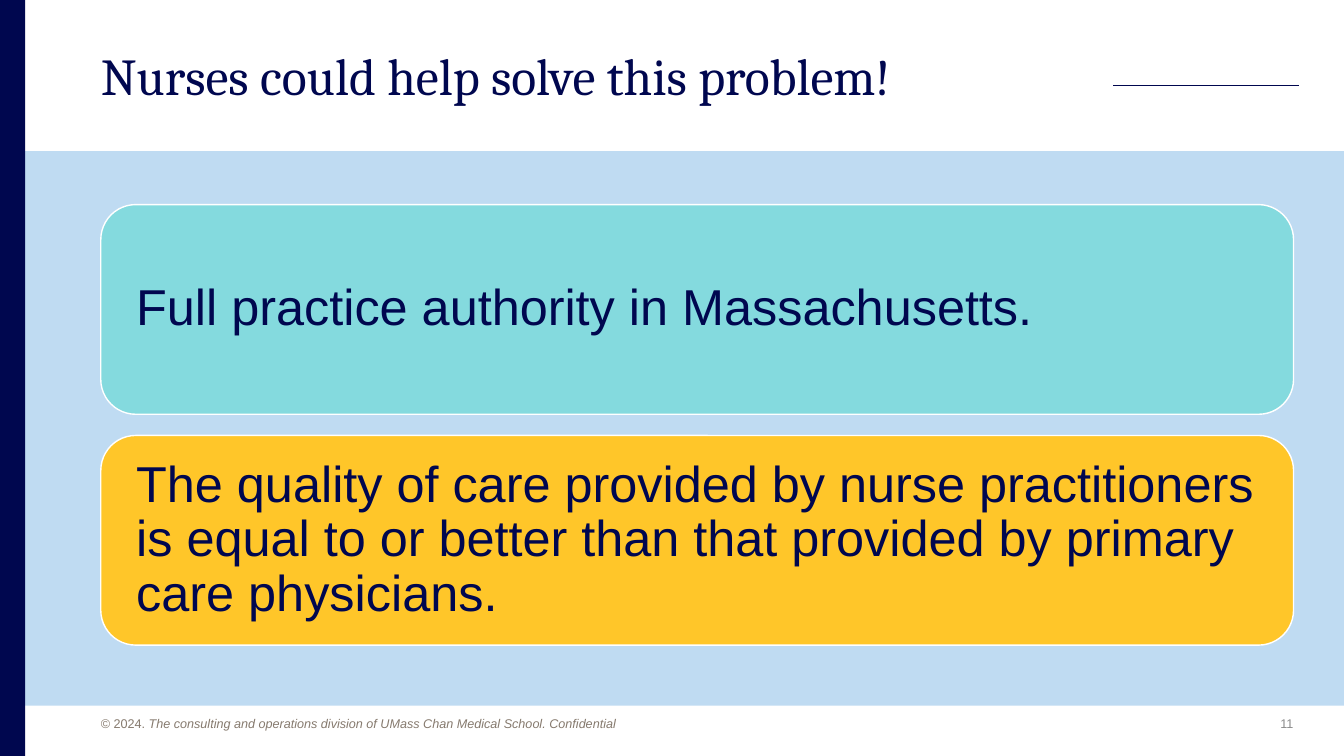
import pptx
import pptx.dml.color
import pptx.enum.shapes
import pptx.enum.text
import pptx.oxml
import pptx.oxml.ns
import pptx.util
from pptx.util import Inches

Shape = pptx.enum.shapes.MSO_SHAPE
Anchor = pptx.enum.text.MSO_ANCHOR
Align = pptx.enum.text.PP_ALIGN

NAVY, BLUE, WHITE = "00074F", "0071CE", "FFFFFF"
TEAL, GOLD, TAUPE, GREY = "84DADE", "FFC629", "867A6E", "8C8C8C"


def tint(color, code):
    color.rgb = pptx.dml.color.RGBColor.from_string(code)


class Deck:
    small = {"name": "Arial", "size": pptx.util.Pt(9)}
    large = {"name": "Arial", "size": pptx.util.Pt(36)}
    head = {"name": "Cambria", "size": pptx.util.Pt(37), "bold": False}

    def __init__(self):
        self.prs = pptx.Presentation()
        self.prs.slide_width = Inches(13.33)
        self.prs.slide_height = Inches(7.5)
        self.slide = self.prs.slides.add_slide(self.prs.slide_layouts[5])
        self.shapes = self.slide.shapes

    def letter(self, shape, runs, style, code, anchor, inset=0, **form):
        """Fill a shape with one paragraph of (text, italic) runs."""
        frame = shape.text_frame
        frame.word_wrap = True
        frame.auto_size = pptx.enum.text.MSO_AUTO_SIZE.NONE
        frame.vertical_anchor = anchor
        for side in ("left", "top", "right", "bottom"):
            setattr(frame, "margin_" + side, Inches(inset))
        para = frame.paragraphs[0]
        for key, value in ({"alignment": Align.LEFT} | form).items():
            setattr(para, key, value)
        for text, italic in runs:
            run = para.add_run()
            run.text = text
            for key, value in (style | {"italic": italic}).items():
                setattr(run.font, key, value)
            tint(run.font.color, code)

    def title(self, text, box):
        shape = self.shapes.title
        names = ("left", "top", "width", "height")
        for name, value in zip(names, box):
            setattr(shape, name, Inches(value))
        self.letter(shape, [(text, False)], self.head, NAVY, Anchor.TOP,
                    line_spacing=0.9)

    def block(self, kind, box, code, alpha=None):
        shape = self.shapes.add_shape(kind, *map(Inches, box))
        shape.shadow.inherit = False
        shape.fill.solid()
        tint(shape.fill.fore_color, code)
        shape.line.fill.background()
        if alpha:
            tone = shape._element.spPr.find(
                ".//" + pptx.oxml.ns.qn("a:srgbClr"))
            tone.append(pptx.oxml.parse_xml(
                f'<a:alpha {pptx.oxml.ns.nsdecls("a")} val="{alpha * 1000}"/>'))
        return shape

    def card(self, text, box, code):
        shape = self.block(Shape.ROUNDED_RECTANGLE, box, code)
        tint(shape.line.color, WHITE)
        shape.line.width = pptx.util.Pt(1)
        self.letter(shape, [(text, False)], self.large, NAVY, Anchor.MIDDLE,
                    0.25, line_spacing=0.9)

    def label(self, runs, box, code, **form):
        shape = self.shapes.add_textbox(*map(Inches, box))
        self.letter(shape, runs, self.small, code, Anchor.BOTTOM, **form)

    def rule(self, start, end):
        line = self.shapes.add_connector(
            pptx.enum.shapes.MSO_CONNECTOR.STRAIGHT,
            *map(Inches, start + end))
        tint(line.line.color, NAVY)
        line.line.width = pptx.util.Pt(0.5)
        line._element.spPr.append(pptx.oxml.parse_xml(
            f'<a:effectLst {pptx.oxml.ns.nsdecls("a")}/>'))


def main():
    deck = Deck()
    deck.block(Shape.RECTANGLE, (0, 1.5, 13.33, 5.5), BLUE, alpha=25)
    deck.block(Shape.RECTANGLE, (0, 0, 0.25, 7.5), NAVY)
    deck.rule((11.04, 0.85), (12.88, 0.85))
    deck.title("Nurses could help solve this problem!", (1, 0.5, 10, 0.73))

    cards = [
        ("Full practice authority in Massachusetts.", TEAL),
        ("The quality of care provided by nurse practitioners is equal to or "
         "better than that provided by primary care physicians.", GOLD),
    ]
    top, high, gap = 2.03, 2.08, 0.21
    for row, (text, code) in enumerate(cards):
        deck.card(text, (1, top + row * (high + gap), 11.83, high), code)

    deck.label([("© 2024. ", False),
                ("The consulting and operations division of UMass Chan "
                 "Medical School. Confidential", True)],
               (1, 7, 5.67, 0.25), TAUPE, line_spacing=1.5)
    deck.label([("11", False)], (12.33, 7.01, 0.5, 0.24), GREY,
               alignment=Align.RIGHT)
    deck.prs.save("out.pptx")


if __name__ == "__main__":
    main()
